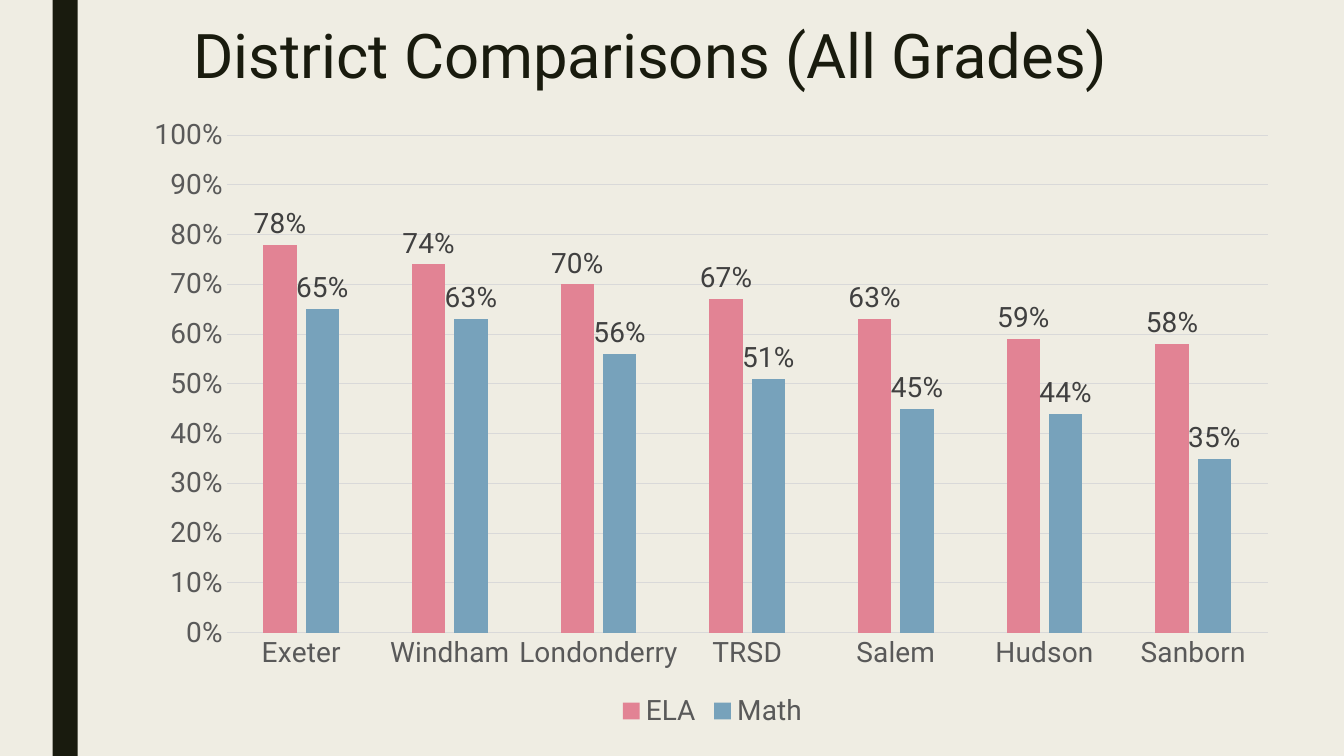
from dataclasses import dataclass

from lxml import etree
from pptx import Presentation
from pptx.chart.data import CategoryChartData
from pptx.dml.color import RGBColor
from pptx.enum.chart import (XL_CHART_TYPE, XL_LABEL_POSITION,
                             XL_LEGEND_POSITION, XL_TICK_MARK)
from pptx.enum.shapes import MSO_SHAPE
from pptx.enum.text import MSO_ANCHOR, MSO_AUTO_SIZE, PP_ALIGN
from pptx.oxml.ns import qn
from pptx.util import Pt

CLUSTERED = XL_CHART_TYPE.COLUMN_CLUSTERED
OUTSIDE_END = XL_LABEL_POSITION.OUTSIDE_END
LEGEND_BOTTOM = XL_LEGEND_POSITION.BOTTOM
NO_TICK = XL_TICK_MARK.NONE
RECTANGLE = MSO_SHAPE.RECTANGLE
TOP = MSO_ANCHOR.TOP
NO_AUTOFIT = MSO_AUTO_SIZE.NONE
LEFT = PP_ALIGN.LEFT
TITLE_ONLY = 5


@dataclass(frozen=True)
class Theme:
    font: str = "Roboto"
    title_size: int = 44
    chart_size: int = 20
    background: str = "EFEDE3"
    dark: str = "191B0E"
    axis_text: str = "595959"
    label_text: str = "404040"
    grid: str = "D9D9D9"
    ela: str = "E28394"
    math: str = "77A2BB"


THEME = Theme()
DISTRICTS = ["Exeter", "Windham", "Londonderry", "TRSD", "Salem", "Hudson", "Sanborn"]
SCORES = [
    ("ELA", THEME.ela, [0.78, 0.74, 0.70, 0.67, 0.63, 0.59, 0.58]),
    ("Math", THEME.math, [0.65, 0.63, 0.56, 0.51, 0.45, 0.44, 0.35]),
]


def style_font(font, size, color):
    font.name = THEME.font
    font.size = Pt(size)
    font.bold = False
    font.color.rgb = RGBColor.from_string(color)


def style_fill(fill, color):
    fill.solid()
    fill.fore_color.rgb = RGBColor.from_string(color)


def style_line(line):
    line.width = Pt(0.75)
    line.color.rgb = RGBColor.from_string(THEME.grid)


def add_side_bar(slide):
    bar = slide.shapes.add_shape(RECTANGLE, Pt(37.5), Pt(0), Pt(18), Pt(540))
    bar.shadow.inherit = False
    style_fill(bar.fill, THEME.dark)
    bar.line.fill.background()


def set_title(slide, text):
    title = slide.shapes.title
    title.left, title.top, title.width, title.height = Pt(131), Pt(15), Pt(756), Pt(117)
    frame = title.text_frame
    frame.word_wrap = True
    frame.auto_size = NO_AUTOFIT
    frame.vertical_anchor = TOP
    paragraph = frame.paragraphs[0]
    paragraph.alignment = LEFT
    paragraph.line_spacing = 0.89
    run = paragraph.add_run()
    run.text = text
    style_font(run.font, THEME.title_size, THEME.dark)


def style_axis(axis):
    axis.major_tick_mark = NO_TICK
    axis.minor_tick_mark = NO_TICK
    style_font(axis.tick_labels.font, THEME.chart_size, THEME.axis_text)


def style_series(series, color):
    style_fill(series.format.fill, color)
    series.invert_if_negative = False
    labels = series.data_labels
    labels.show_value = True
    labels.position = OUTSIDE_END
    labels.number_format = "0%"
    labels.number_format_is_linked = False
    style_font(labels.font, THEME.chart_size, THEME.label_text)


def add_score_chart(slide):
    data = CategoryChartData(number_format="0%")
    data.categories = DISTRICTS
    for name, _, values in SCORES:
        data.add_series(name, values)
    chart = slide.shapes.add_chart(
        CLUSTERED, Pt(96), Pt(74), Pt(826), Pt(450), data).chart
    chart.has_title = False
    style_font(chart.font, THEME.chart_size, THEME.axis_text)

    # Columns and their labels
    plot = chart.plots[0]
    plot.gap_width = 219
    plot.overlap = -27
    plot.vary_by_categories = False
    for series, (_, color, _) in zip(plot.series, SCORES):
        style_series(series, color)

    # Axes and gridlines
    style_axis(chart.category_axis)
    style_line(chart.category_axis.format.line)
    value_axis = chart.value_axis
    style_axis(value_axis)
    value_axis.format.line.fill.background()
    value_axis.minimum_scale = 0
    value_axis.maximum_scale = 1
    value_axis.major_unit = 0.1
    value_axis.tick_labels.number_format = "0%"
    value_axis.tick_labels.number_format_is_linked = False
    value_axis.has_major_gridlines = True
    style_line(value_axis.major_gridlines.format.line)

    # Legend
    chart.has_legend = True
    chart.legend.position = LEGEND_BOTTOM
    chart.legend.include_in_layout = False
    style_font(chart.legend.font, THEME.chart_size, THEME.axis_text)
    return chart


def fix_plot_area(chart, x, y, width, height):
    """Place the inner plot area, in fractions of the chart."""
    plot_area = chart.plots[0]._element.getparent()
    for old in plot_area.findall(qn("c:layout")):
        plot_area.remove(old)
    layout = etree.Element(qn("c:layout"))
    plot_area.insert(0, layout)
    manual = etree.SubElement(layout, qn("c:manualLayout"))
    settings = [("layoutTarget", "inner"), ("xMode", "edge"), ("yMode", "edge"),
                ("x", x), ("y", y), ("w", width), ("h", height)]
    for name, value in settings:
        etree.SubElement(manual, qn(f"c:{name}")).set("val", str(value))


def main():
    presentation = Presentation()
    presentation.slide_width = Pt(960)
    presentation.slide_height = Pt(540)
    slide = presentation.slides.add_slide(presentation.slide_layouts[TITLE_ONLY])
    style_fill(slide.background.fill, THEME.background)

    add_side_bar(slide)
    set_title(slide, "District Comparisons (All Grades)")
    chart = add_score_chart(slide)
    fix_plot_area(chart, 0.08, 0.05, 0.9, 0.79)

    presentation.save("out.pptx")


if __name__ == "__main__":
    main()
